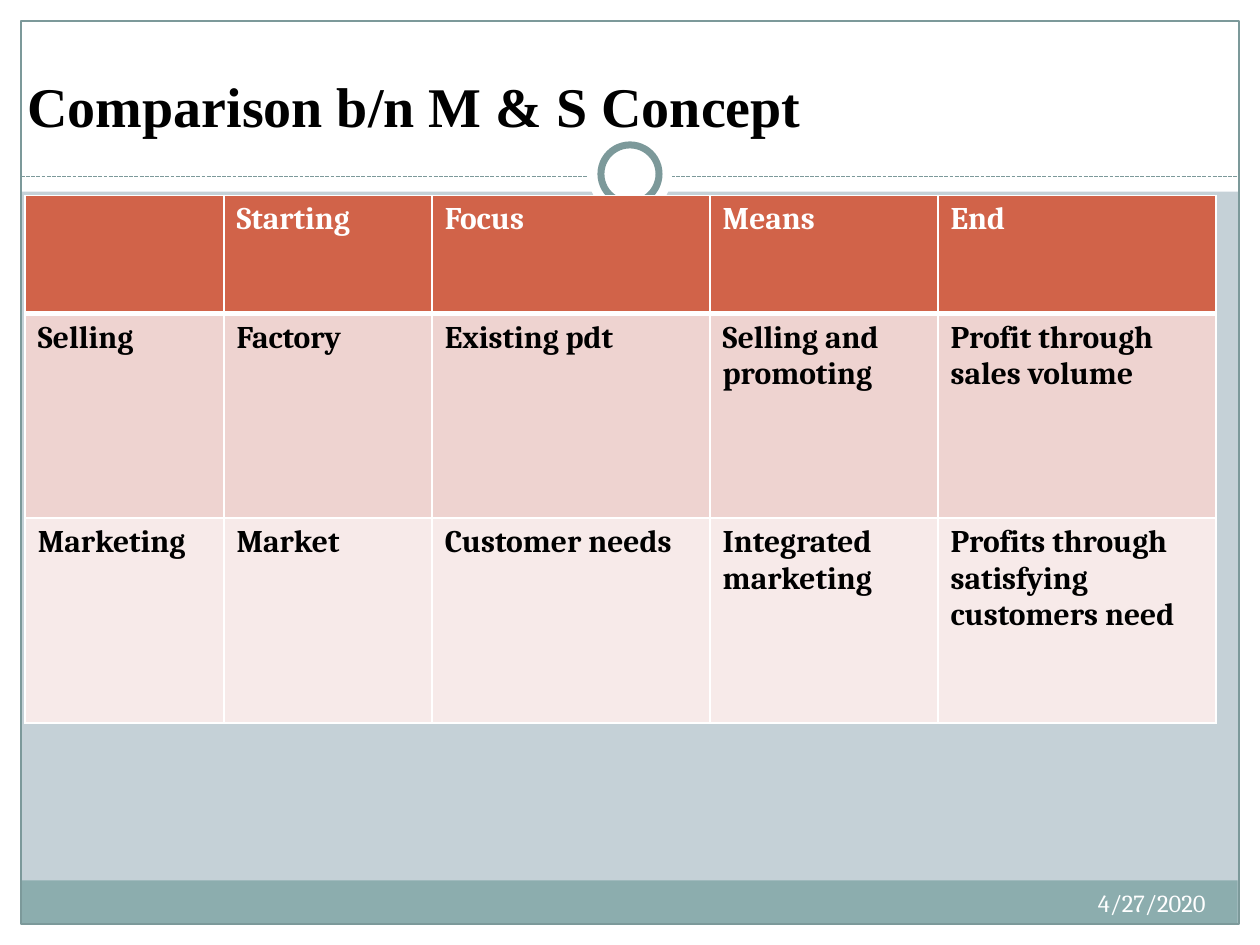
import pptx
import pptx.util
import pptx.dml.color
import pptx.enum.dml
import pptx.enum.shapes
import pptx.enum.text
import pptx.oxml

Pt = pptx.util.Pt
KIND = pptx.enum.shapes.MSO_SHAPE
ALIGN = pptx.enum.text.PP_ALIGN
ANCHOR = pptx.enum.text.MSO_ANCHOR

HUES = {"back": "C5D1D7", "white": "FFFFFF", "black": "000000", "band": "8CADAE",
        "edge": "7C999A", "head": "D16349", "odd": "EED3D0", "even": "F7EAE9"}
WIDE, HIGH, RIM = 720, 540, 12
SHAPES = [
    (KIND.RECTANGLE, (0, HIGH - RIM, WIDE, RIM), "white", 0),
    (KIND.RECTANGLE, (0, 0, WIDE, 109.5), "white", 0),
    (KIND.RECTANGLE, (0, 0, RIM, HIGH), "white", 0),
    (KIND.RECTANGLE, (WIDE - RIM, 0, RIM, HIGH), "white", 0),
    (KIND.RECTANGLE, (11.75, 503, 695.5, 24.75), "band", 0),
    (KIND.RECTANGLE, (RIM, RIM, WIDE - 2 * RIM, HIGH - 2 * RIM), None, 0.75),
]
RINGS = [
    (KIND.OVAL, (336, 75.6, 48, 48), "white", 0),
    (KIND.OVAL, (343.4, 82.8, 33.2, 33.2), "white", 4),
]
RULE = 100.8
DATE = ("4/27/2020", (456, 504, 240, 28.8), ALIGN.RIGHT, ANCHOR.TOP,
        {"name": "Cambria", "size": Pt(14), "bold": False}, "white")
TITLE = ("Comparison b/n M & S Concept", (8.6, 18, 697.7, 64.8), ALIGN.LEFT, ANCHOR.BOTTOM,
         {"name": "Times New Roman", "size": Pt(32), "bold": True}, "black")
ROWS = [
    ["", "Starting", "Focus", "Means", "End"],
    ["Selling", "Factory", "Existing pdt", "Selling and promoting",
     "Profit through sales volume"],
    ["Marketing", "Market", "Customer needs", "Integrated marketing",
     "Profits through satisfying customers need"],
]
COLS = [113.6, 119, 158.8, 130.2, 158.8]
TALL = [67.5, 117, 117]
FILLS = ["head", "odd", "even"]
INKS = ["white", "black", "black"]
CELL = {"name": "Cambria", "size": Pt(18), "bold": True}


def hue(name):
    return pptx.dml.color.RGBColor.from_string(HUES[name])


def paint(fill, name):
    fill.solid()
    fill.fore_color.rgb = hue(name)


def style(font, form, ink):
    for key, val in form.items():
        setattr(font, key, val)
    font.color.rgb = hue(ink)


def draw(slide, kind, box, fill, line):
    shape = slide.shapes.add_shape(kind, *map(Pt, box))
    shape.shadow.inherit = False
    if fill:
        paint(shape.fill, fill)
    else:
        shape.fill.background()
    if line:
        shape.line.color.rgb = hue("edge")
        shape.line.width = Pt(line)
    else:
        shape.line.fill.background()


def rule(slide):
    line = slide.shapes.add_connector(pptx.enum.shapes.MSO_CONNECTOR.STRAIGHT,
                                      Pt(RIM), Pt(RULE), Pt(WIDE - RIM), Pt(RULE))
    line.line.color.rgb = hue("edge")
    line.line.width = Pt(0.75)
    line.line.dash_style = pptx.enum.dml.MSO_LINE.SQUARE_DOT
    props = line.element.spPr
    props.append(props.makeelement(pptx.oxml.ns.qn("a:effectLst"), {}))


def write(slide, text, box, align, anchor, form, ink):
    frame = slide.shapes.add_textbox(*map(Pt, box)).text_frame
    frame.word_wrap = True
    frame.vertical_anchor = anchor
    par = frame.paragraphs[0]
    par.alignment = align
    run = par.add_run()
    run.text = text
    style(run.font, form, ink)


def edge(cell, sides):
    props = cell._tc.get_or_add_tcPr()
    for spot, (side, width) in enumerate(sides.items()):
        props.insert(spot, pptx.oxml.parse_xml(
            f'<a:ln{side} {pptx.oxml.ns.nsdecls("a")} w="{Pt(width)}"><a:solidFill>'
            f'<a:srgbClr val="{HUES["white"]}"/></a:solidFill></a:ln{side}>'))


def grid(slide):
    box = (14.4, 111.6, sum(COLS), sum(TALL))
    table = slide.shapes.add_table(len(ROWS), len(COLS), *map(Pt, box)).table
    for col, width in zip(table.columns, COLS):
        col.width = Pt(width)
    for r, texts in enumerate(ROWS):
        table.rows[r].height = Pt(TALL[r])
        for c, text in enumerate(texts):
            cell = table.cell(r, c)
            paint(cell.fill, FILLS[r])
            edge(cell, {"L": 1, "R": 1, "T": 3 if r == 1 else 1, "B": 3 if r == 0 else 1})
            if text:
                run = cell.text_frame.paragraphs[0].add_run()
                run.text = text
                style(run.font, CELL, INKS[r])


def main():
    deck = pptx.Presentation()
    deck.slide_width, deck.slide_height = Pt(WIDE), Pt(HIGH)
    slide = deck.slides.add_slide(deck.slide_layouts[6])
    paint(slide.background.fill, "back")
    for item in SHAPES:
        draw(slide, *item)
    rule(slide)
    for item in RINGS:
        draw(slide, *item)
    write(slide, *DATE)
    grid(slide)
    write(slide, *TITLE)
    deck.save("out.pptx")


if __name__ == "__main__":
    main()
